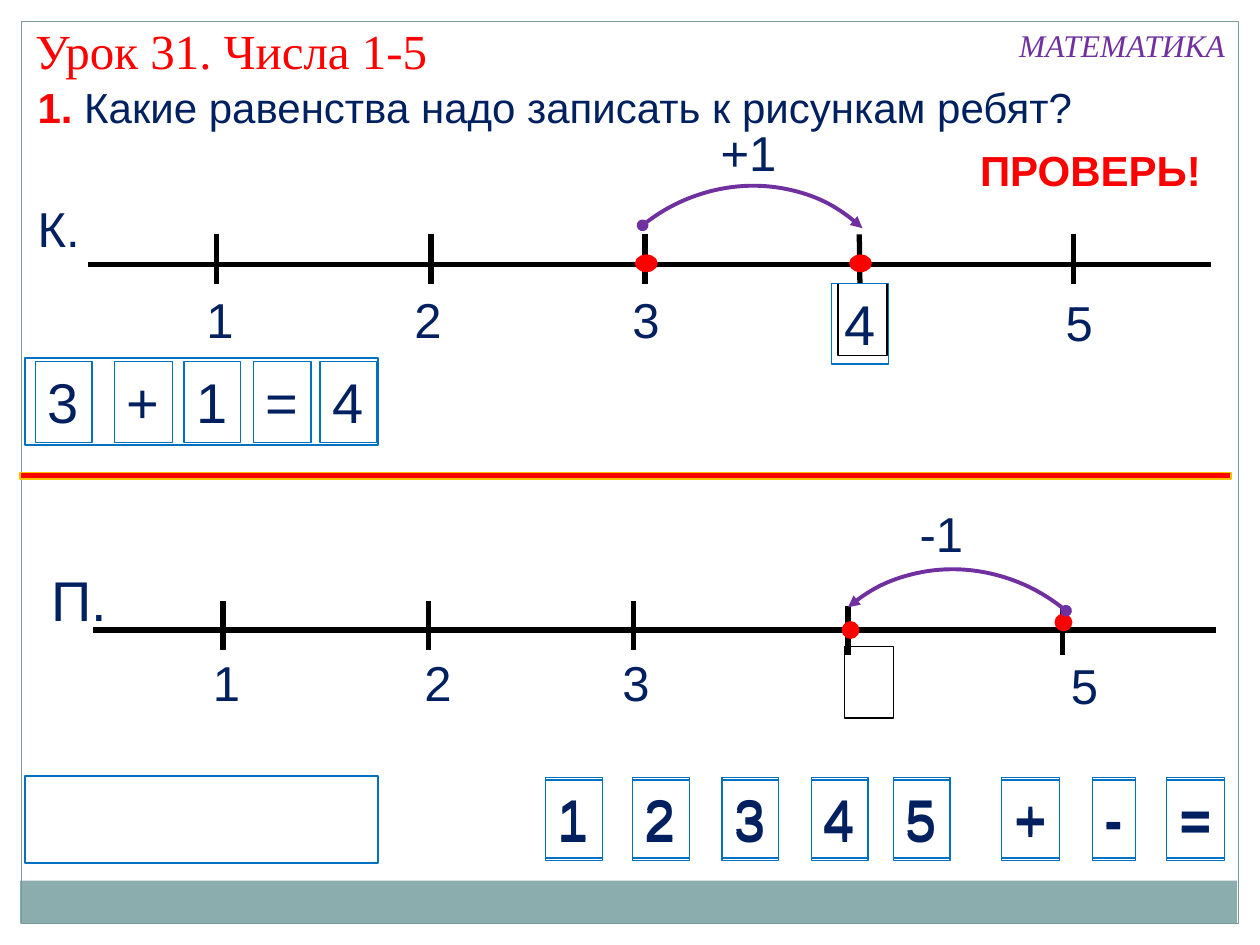
from lxml.etree import SubElement
from pptx import Presentation
from pptx.dml.color import RGBColor
from pptx.enum.shapes import MSO_CONNECTOR, MSO_SHAPE
from pptx.enum.text import MSO_AUTO_SIZE
from pptx.oxml.ns import qn
from pptx.util import Inches, Pt

# Grid: 100 columns by 75 rows
CELL = Inches(0.1)
NAVY, RED, PURPLE, BLUE, BLACK = "002060", "FF0000", "7030A0", "0070C0", "000000"

lesson = Presentation()
lesson.slide_width, lesson.slide_height = 100 * CELL, 75 * CELL
slide = lesson.slides.add_slide(lesson.slide_layouts[6])
shapes = slide.shapes


def paint(fill, color=None):
    """Fill an area, a line or a font with a hex colour; None leaves it empty."""
    if color is None:
        fill.background()
    else:
        fill.solid()
        fill.fore_color.rgb = RGBColor.from_string(color)


def write(text, at, size=28, font="Arial", color=NAVY, bold=False, italic=False,
          wrap=True, border=None, lead=""):
    """Place text on the grid, with an optional border and red bold lead-in."""
    label = shapes.add_textbox(*[int(cells * CELL) for cells in at])
    frame = label.text_frame
    frame.word_wrap = wrap
    frame.auto_size = MSO_AUTO_SIZE.SHAPE_TO_FIT_TEXT
    if border:
        paint(label.line.fill, border)
        label.line.width = Pt(0.75)
    pieces = [(lead, RED, True), (text, color, bold)]
    for piece, piece_color, piece_bold in pieces:
        if piece:
            run = frame.paragraphs[0].add_run()
            run.text = piece
            run.font.size, run.font.name = Pt(size), font
            run.font.bold, run.font.italic = piece_bold, italic
            paint(run.font.fill, piece_color)
    return label


# Number lines and their ticks: x1, y1, x2, y2
strokes = [(7, 21, 96.1, 21), (7.4, 50, 96.5, 50)]
strokes += [(x, 18.6, x, 22.5) for x in (17.2, 34.2, 51.2, 85.2, 68.2)]
strokes += [(x, 47.7, x, 51.6) for x in (17.7, 34, 50.3)]
strokes += [(x, 48.1, x, 52) for x in (67.3, 84.3)]
ticks = {}
for stroke in strokes:
    tick = shapes.add_connector(
        MSO_CONNECTOR.STRAIGHT, *[int(cells * CELL) for cells in stroke])
    paint(tick.line.fill, BLACK)
    tick.line.width = Pt(3)
    SubElement(tick._element.spPr, qn("a:effectLst"))
    ticks[stroke[:2]] = tick

# Frame, footer band, divider, empty boxes and marked points
RECT, DOT = MSO_SHAPE.RECTANGLE, MSO_SHAPE.FLOWCHART_CONNECTOR
areas = [
    (RECT, (1.6, 69.9, 96.6, 3.4), "8CADAE", None, 0),
    (RECT, (1.7, 1.7, 96.6, 71.6), None, "7C999A", 0.75),
    (RECT, (1.6, 37.5, 96.1, 0.5), RED, "FFC000", 0.9),
    (RECT, (66.5, 22.5, 3.9, 5.7), None, BLACK, 0.75),
    (RECT, (67, 51.3, 3.9, 5.7), None, BLACK, 0.75),
    (RECT, (2, 28.4, 28, 6.9), None, BLUE, 0.9),
    (RECT, (2, 61.6, 28, 6.9), None, BLUE, 0.9),
    (DOT, (50.5, 20.3, 1.6, 1.2), RED, RED, 1.5),
    (DOT, (67.5, 20.3, 1.6, 1.2), RED, RED, 1.5),
    (DOT, (66.9, 49.4, 1.2, 1.2), RED, RED, 1.5),
    (DOT, (83.8, 48.8, 1.2, 1.2), RED, RED, 1.5),
]
for preset, at, fill, outline, width in areas:
    area = shapes.add_shape(preset, *[int(cells * CELL) for cells in at])
    area.shadow.inherit = False
    paint(area.fill, fill)
    paint(area.line.fill, outline)
    if outline:
        area.line.width = Pt(width)

# Jump arcs: place, rotation, start and end angles, mirrored
jumps = [
    ((45.1, 15.2, 27.7, 26), 313.3, (167.45, 0), False),
    ((62.6, 45.6, 27.7, 26), 44.3, (165.26, 213.37), True),
]
for at, rotation, angles, mirrored in jumps:
    jump = shapes.add_shape(MSO_SHAPE.ARC, *[int(cells * CELL) for cells in at])
    jump.shadow.inherit = False
    jump.rotation = rotation
    jump.adjustments[0], jump.adjustments[1] = angles
    paint(jump.fill)
    paint(jump.line.fill, PURPLE)
    jump.line.width = Pt(2.25)
    if mirrored:
        jump._element.spPr.find(qn("a:xfrm")).set("flipH", "1")
    outline = jump._element.spPr.find(qn("a:ln"))
    SubElement(outline, qn("a:headEnd"), type="oval")
    SubElement(outline, qn("a:tailEnd"), type="triangle")

# Headings
write("Урок 31. Числа 1-5", (1.8, 1.1, 33.9, 5.7), font="Times New Roman", color=RED)
write("МАТЕМАТИКА", (79.9, 1.6, 18.5, 4), size=18, font="Times New Roman",
      color=PURPLE, italic=True, wrap=False)
write("Какие равенства надо записать к рисункам ребят?", (2, 6, 90, 5),
      size=24, lead="1. ")
write("ПРОВЕРЬ!", (76.8, 11, 20, 5), size=24, color=RED, bold=True)

# Row names and jump sizes
write("К.", (2, 15.3, 7, 5.7))
write("П.", (3.1, 44.4, 6.7, 6.4), size=32)
write("+1", (56.2, 9.2, 7.9, 5.7))
write("-1", (72, 39.5, 8.6, 5.7))

# Numbers under the ticks
numbers = [
    ("1", 15.4, 22.5), ("2", 31.9, 22.5), ("3", 49.2, 22.5), ("5", 83.6, 22.7),
    ("1", 15.9, 51.3), ("2", 32.7, 51.3), ("3", 48.4, 51.3), ("5", 84, 51.5),
]
for number, left, top in numbers:
    write(number, (left, top, 3.9, 5.7))

# Cards: the doubled stack at the bottom, then the solved equality
stack = [("1", 43.3), ("2", 50.2), ("3", 57.3), ("4", 64.4), ("5", 70.9),
         ("+", 79.5), ("-", 86.7), ("=", 92.6)]
equality = [("3", 2.8), ("+", 9.1), ("1", 14.6), ("=", 20.1), ("4", 25.4)]
card_width = {"+": 4.6, "=": 4.6, "-": 3.4}
for top, row in ((61.9, stack), (61.7, stack), (28.7, equality)):
    for sign, left in row:
        write(sign, (left, top, card_width.get(sign, 4.5), 6.4), size=32,
              wrap=sign == "-", border=BLUE)

# Answer card hanging from the fourth tick
answer = write("4", (66, 22.5, 4.5, 6.4), size=32, wrap=False, border=BLUE)
ticks[68.2, 18.6].end_connect(answer, 0)

lesson.save("out.pptx")
